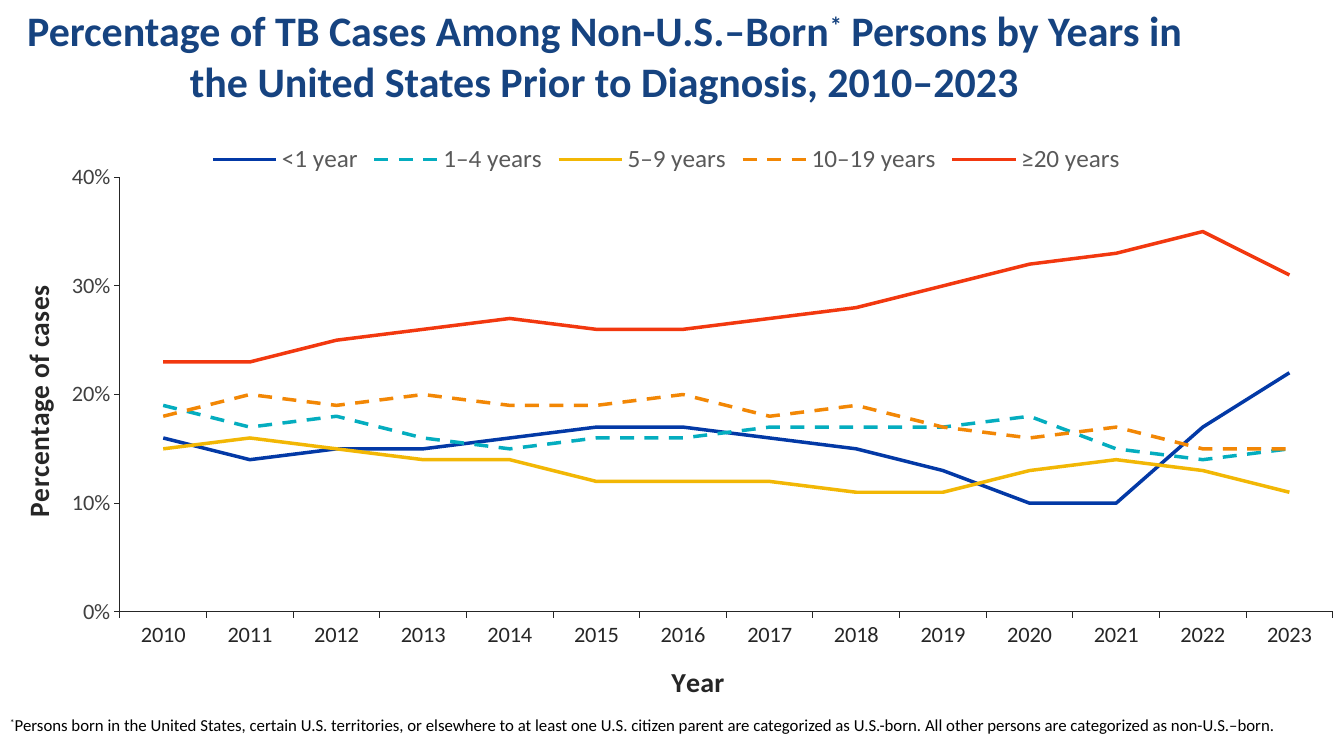
from lxml import etree
from pptx import Presentation
from pptx import util as u
from pptx.chart import data
from pptx.dml import color
from pptx.enum import chart as charts, dml, text
from pptx.oxml import ns

YEARS = [str(year) for year in range(2010, 2024)]
SERIES = [
    ("<1 year", "0339A6", False, [16, 14, 15, 15, 16, 17, 17, 16, 15, 13, 10, 10, 17, 22]),
    ("1–4 years", "04ADBF", True, [19, 17, 18, 16, 15, 16, 16, 17, 17, 17, 18, 15, 14, 15]),
    ("5–9 years", "F2B705", False, [15, 16, 15, 14, 14, 12, 12, 12, 11, 11, 13, 14, 13, 11]),
    ("10–19 years", "F28705", True, [18, 20, 19, 20, 19, 19, 20, 18, 19, 17, 16, 17, 15, 15]),
    ("≥20 years", "F2380F", False, [23, 23, 25, 26, 27, 26, 26, 27, 28, 30, 32, 33, 35, 31]),
]


def rgb(value):
    return color.RGBColor.from_string(value)


def style_font(font, size, fill, bold=False, name="Calibri"):
    font.name, font.size, font.bold = name, u.Pt(size), bold
    font.color.rgb = rgb(fill)


def write(para, words, raised=False, **style):
    span = para.add_run()
    span.text = words
    style_font(span.font, **style)
    if raised:
        span._r.get_or_add_rPr().set("baseline", "30000")


def place(parent, index, **fractions):
    layout = parent.find(ns.qn("c:layout"))
    if layout is None:
        layout = parent.makeelement(ns.qn("c:layout"), {})
        parent.insert(index, layout)
    manual = etree.SubElement(layout, ns.qn("c:manualLayout"))
    if "w" in fractions:
        etree.SubElement(manual, ns.qn("c:layoutTarget")).set("val", "inner")
    for side in "xy":
        etree.SubElement(manual, ns.qn(f"c:{side}Mode")).set("val", "edge")
    for key, value in fractions.items():
        etree.SubElement(manual, ns.qn(f"c:{key}")).set("val", str(value))


class Report:
    """Holds the text style and the current page, and adds elements to it."""

    dark = "262626"

    def __init__(self, deck):
        self.page = deck.slides.add_slide(deck.slide_layouts[6])

    def text(self, left, top, width, height, pieces, anchor, align, **style):
        box = self.page.shapes.add_textbox(u.Cm(left), u.Cm(top), u.Cm(width), u.Cm(height))
        frame = box.text_frame
        frame.word_wrap = True
        frame.vertical_anchor = anchor
        para = frame.paragraphs[0]
        para.alignment = align
        for words, raised in pieces:
            write(para, words, raised, **style)

    def axis(self, axis, title, label_color, x, y):
        axis.has_major_gridlines = False
        axis.major_tick_mark = charts.XL_TICK_MARK.OUTSIDE
        axis.minor_tick_mark = charts.XL_TICK_MARK.NONE
        axis.format.line.color.rgb = rgb(self.dark)
        axis.format.line.width = u.Pt(0.75)
        style_font(axis.tick_labels.font, 16, label_color)
        para = axis.axis_title.text_frame.paragraphs[0]
        write(para, title, size=20, fill=self.dark, bold=True)
        place(axis.axis_title._element, 1, x=x, y=y)

    def line_chart(self, left, top, width, height):
        source = data.CategoryChartData(number_format='0"%"')
        source.categories = YEARS
        for name, _, _, values in SERIES:
            source.add_series(name, values)
        chart = self.page.shapes.add_chart(
            charts.XL_CHART_TYPE.LINE, u.Cm(left), u.Cm(top), u.Cm(width), u.Cm(height), source
        ).chart
        style_font(chart.font, 10, "000000")
        chart.has_title = False
        chart.has_legend = True
        chart.legend.position = charts.XL_LEGEND_POSITION.TOP
        chart.legend.include_in_layout = False
        style_font(chart.legend.font, 18, "595959")
        place(chart._chartSpace.chart.plotArea, 0, x=0.09, y=0.08, w=0.91, h=0.77)

        self.axis(chart.category_axis, "Year", self.dark, 0.5, 0.93)
        self.axis(chart.value_axis, "Percentage of cases", "404040", 0.01, 0.27)
        scale = chart.value_axis
        scale.minimum_scale, scale.maximum_scale, scale.major_unit = 0, 40, 10
        scale.tick_labels.number_format = '0"%"'
        scale.tick_labels.number_format_is_linked = False

        plot = chart.plots[0]
        plot.vary_by_categories = False
        for series, (_, fill, dashed, _) in zip(plot.series, SERIES):
            series.smooth = False
            series.marker.style = charts.XL_MARKER_STYLE.NONE
            series.format.line.color.rgb = rgb(fill)
            series.format.line.width = u.Pt(2.5)
            if dashed:
                series.format.line.dash_style = dml.MSO_LINE.DASH


def main():
    deck = Presentation()
    deck.slide_width, deck.slide_height = u.Cm(33.87), u.Cm(19.05)
    report = Report(deck)
    report.text(
        0, 0.86, 30.48, 1.93,
        [
            ("Percentage of TB Cases Among Non-U.S.–Born", False),
            ("*", True),
            (" Persons by Years in the United States Prior to Diagnosis, 2010–2023", False),
        ],
        text.MSO_ANCHOR.BOTTOM, text.PP_ALIGN.CENTER, size=30, fill="164380", bold=True,
    )
    report.line_chart(0, 3.33, 33.6, 14.5)
    report.text(
        0, 17.88, 33.3, 0.76,
        [
            ("*", True),
            ("Persons born in the United States, certain U.S. territories, or elsewhere to at least "
             "one U.S. citizen parent are categorized as U.S.-born. All other persons are "
             "categorized as non-U.S.–born.", False),
        ],
        text.MSO_ANCHOR.TOP, text.PP_ALIGN.LEFT, size=12, fill="000000",
    )
    deck.save("out.pptx")


if __name__ == "__main__":
    main()
